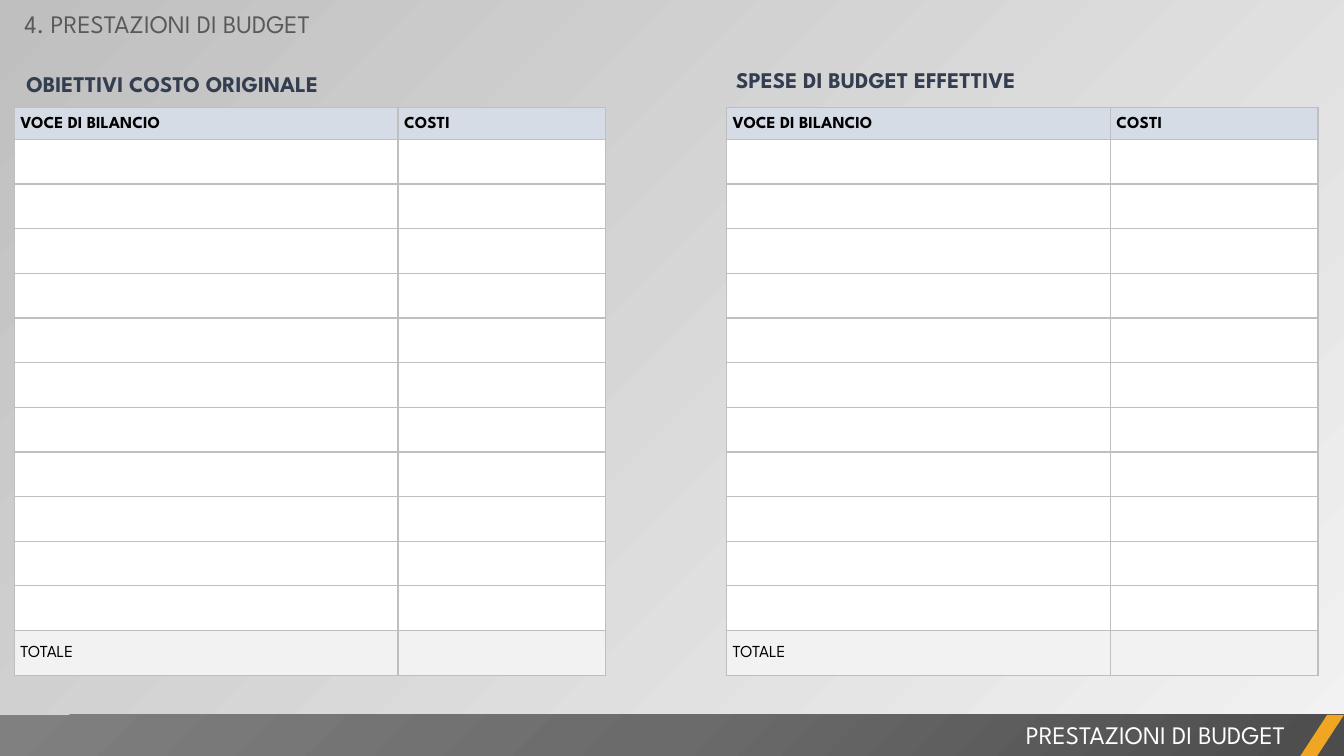
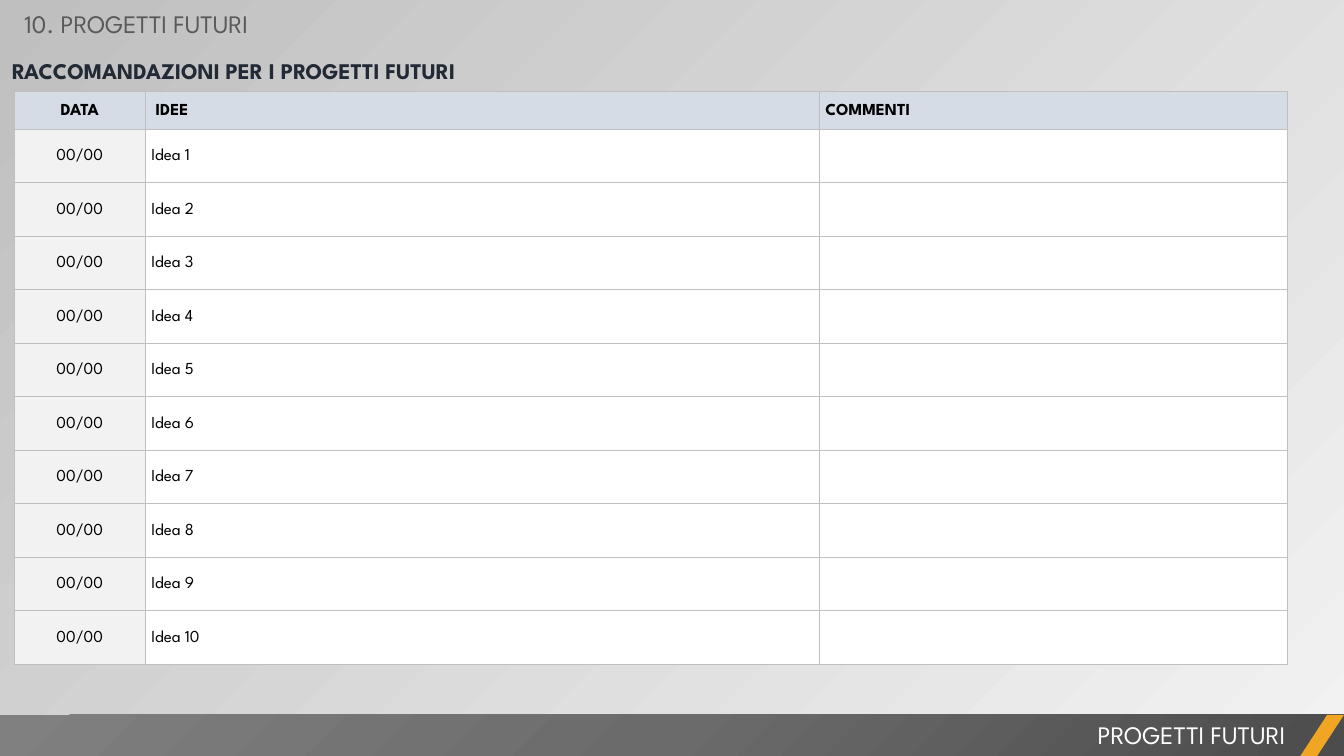
from dataclasses import dataclass

from lxml.etree import SubElement as Sub
from pptx import Presentation
from pptx.dml.color import RGBColor as RGB
from pptx.enum.shapes import MSO_SHAPE as Shape
from pptx.enum.text import MSO_ANCHOR as Anchor, MSO_AUTO_SIZE as Fit, PP_ALIGN as Align
from pptx.oxml.ns import qn
from pptx.util import Inches, Pt


@dataclass(frozen=True)
class Theme:
    font: str = "League Spartan"
    title: str = "595959"
    slate: str = "333F50"
    navy: str = "222A35"
    ink: str = "000000"
    white: str = "FFFFFF"
    head: str = "D6DCE5"
    tint: str = "F2F2F2"
    rule: str = "BFBFBF"
    gold: str = "F0A622"
    back: tuple = ((0, "F2F2F2", 40), (100, "BFBFBF", 100))
    band: tuple = ((0, "4C4C4C", 100), (50, "6B6B6B", 100), (100, "808080", 100))
    large: int = 18
    mid: int = 16
    small: int = 12


T = Theme()
WIDE, HIGH = Inches(13.333), Inches(7.5)
COLS, ROWS = 16, 9
TITLE = (0.17, 0.04, 6.37, 0.48)
BAND = (0, 8.51, COLS, 0.49)


def place(box):
    """Turn a box in grid columns and rows into slide lengths."""
    x, y, w, h = box
    return [round(n) for n in (x * WIDE / COLS, y * HIGH / ROWS,
                               w * WIDE / COLS, h * HIGH / ROWS)]


def write(frame, text, size=T.small, color=T.ink, bold=False,
          align=Align.LEFT, line=1.0, before=0):
    para = frame.paragraphs[0]
    para.alignment, para.line_spacing = align, line
    para.space_before = Pt(before)
    run = para.add_run()
    run.text = text
    font = run.font
    font.name, font.size, font.bold = T.font, Pt(size), bold
    font.color.rgb = RGB.from_string(color)


def pad(frame, x, y):
    frame.margin_left = frame.margin_right = Inches(x)
    frame.margin_top = frame.margin_bottom = Inches(y)


def label(slide, box, text, inset=(0.1, 0.05), **style):
    frame = slide.shapes.add_textbox(*place(box)).text_frame
    frame.word_wrap, frame.auto_size = True, Fit.SHAPE_TO_FIT_TEXT
    pad(frame, *inset)
    write(frame, text, **style)


def heading(slide, box, text, color, line):
    label(slide, box, text, inset=(0.12, 0.06), size=T.mid, color=color,
          bold=True, line=line, before=3.2)


def blend(host, fill, stops, angle=None):
    """Fill with a linear blend, or one that spreads from the lower right."""
    fill.gradient()
    grad = host.element.find(".//" + qn("a:gradFill"))
    for part in list(grad):
        grad.remove(part)
    steps = Sub(grad, qn("a:gsLst"))
    for pos, color, alpha in stops:
        stop = Sub(steps, qn("a:gs"), pos=str(pos * 1000))
        tone = Sub(stop, qn("a:srgbClr"), val=color)
        if alpha < 100:
            Sub(tone, qn("a:alpha"), val=str(alpha * 1000))
    if angle is not None:
        Sub(grad, qn("a:lin"), ang=str(angle * 60000), scaled="0")
    else:
        path = Sub(grad, qn("a:path"), path="circle")
        Sub(path, qn("a:fillToRect"), l="100000", t="100000")


def block(slide, kind, box):
    shape = slide.shapes.add_shape(kind, *place(box))
    shape.shadow.inherit = False
    shape.line.fill.background()
    return shape


def footer(slide, box, text):
    x, y, w, h = box
    bar = block(slide, Shape.RECTANGLE, box)
    blend(bar, bar.fill, T.band)
    label(slide, (x + 6.3, y - 0.01, w - 6.88, h), text, size=T.large,
          color=T.white, align=Align.RIGHT)
    wedge = block(slide, Shape.PARALLELOGRAM, (x + w - 0.52, y, 0.52, h))
    wedge.adjustments[0] = 0.652
    wedge.fill.solid()
    wedge.fill.fore_color.rgb = RGB.from_string(T.gold)


def edge(cell):
    props = cell._tc.get_or_add_tcPr()
    for side in ("lnL", "lnR", "lnT", "lnB"):
        line = Sub(props, qn("a:" + side), w=str(Pt(1)))
        Sub(Sub(line, qn("a:solidFill")), qn("a:srgbClr"), val=T.rule)


def grid(slide, box, data, shares, top, tinted, middle=()):
    """Draw a table: top is the header height, middle the centred columns."""
    table = slide.shapes.add_table(len(data), len(shares), *place(box)).table
    table.first_row = table.horz_banding = False
    w, h = box[2:]
    for col, share in zip(table.columns, shares):
        col.width = place((0, 0, w * share / sum(shares), 0))[2]
    for r, texts in enumerate(data):
        tall = (h - top) / (len(data) - 1) if r else top
        table.rows[r].height = place((0, 0, 0, tall))[3]
        for c, text in enumerate(texts):
            cell = table.cell(r, c)
            edge(cell)
            cell.fill.solid()
            color = T.head if r == 0 else T.tint if tinted(r, c) else T.white
            cell.fill.fore_color.rgb = RGB.from_string(color)
            cell.vertical_anchor = Anchor.MIDDLE
            pad(cell, 0.06, 0)
            if text:
                write(cell.text_frame, text, bold=r == 0, line=1.07,
                      align=Align.CENTER if c in middle else Align.LEFT)


def start(deck, num, name):
    """Add a slide with its numbered title and footer."""
    slide = deck.slides.add_slide(deck.slide_layouts[5])
    title = slide.shapes.title
    title.left, title.top, title.width, title.height = place(TITLE)
    frame = title.text_frame
    frame.word_wrap, frame.auto_size = True, Fit.SHAPE_TO_FIT_TEXT
    frame.vertical_anchor = Anchor.TOP
    pad(frame, 0.1, 0.05)
    write(frame, f"{num}. {name}", size=T.large, color=T.title)
    footer(slide, BAND, name)
    return slide


def budget(deck):
    slide = start(deck, 4, "PRESTAZIONI DI BUDGET")
    blank = [("", "")] * 11
    data = [("VOCE DI BILANCIO", "COSTI"), *blank, ("TOTALE", "")]
    for text, x, y, left in (("OBIETTIVI COSTO ORIGINALE", 0.17, 0.72, 0.17),
                             ("SPESE DI BUDGET EFFETTIVE", 8.62, 0.68, 8.65)):
        heading(slide, (x, y, 6.7, 0.48), text, T.slate, Pt(21.5))
        grid(slide, (left, 1.28, 7.04, 6.76), data, (3.81, 2.06), 0.38,
             lambda r, c: r == len(data) - 1)


def future(deck):
    slide = start(deck, 10, "PROGETTI FUTURI")
    heading(slide, (0, 0.55, 10.03, 0.49),
            "RACCOMANDAZIONI PER I PROGETTI FUTURI", T.navy, 1.2)
    ideas = [("00/00", f"Idea {n}", "") for n in range(1, 11)]
    grid(slide, (0.17, 1.09, 15.16, 6.82),
         [("DATA", " IDEE", "COMMENTI"), *ideas], (1.3, 6.69, 4.65), 0.45,
         lambda r, c: c == 0, middle=(0,))


def main():
    deck = Presentation()
    deck.slide_width, deck.slide_height = WIDE, HIGH
    base = deck.slide_layouts[5]
    blend(base, base.background.fill, T.back, angle=225)
    budget(deck)
    future(deck)
    deck.save("out.pptx")


if __name__ == "__main__":
    main()
